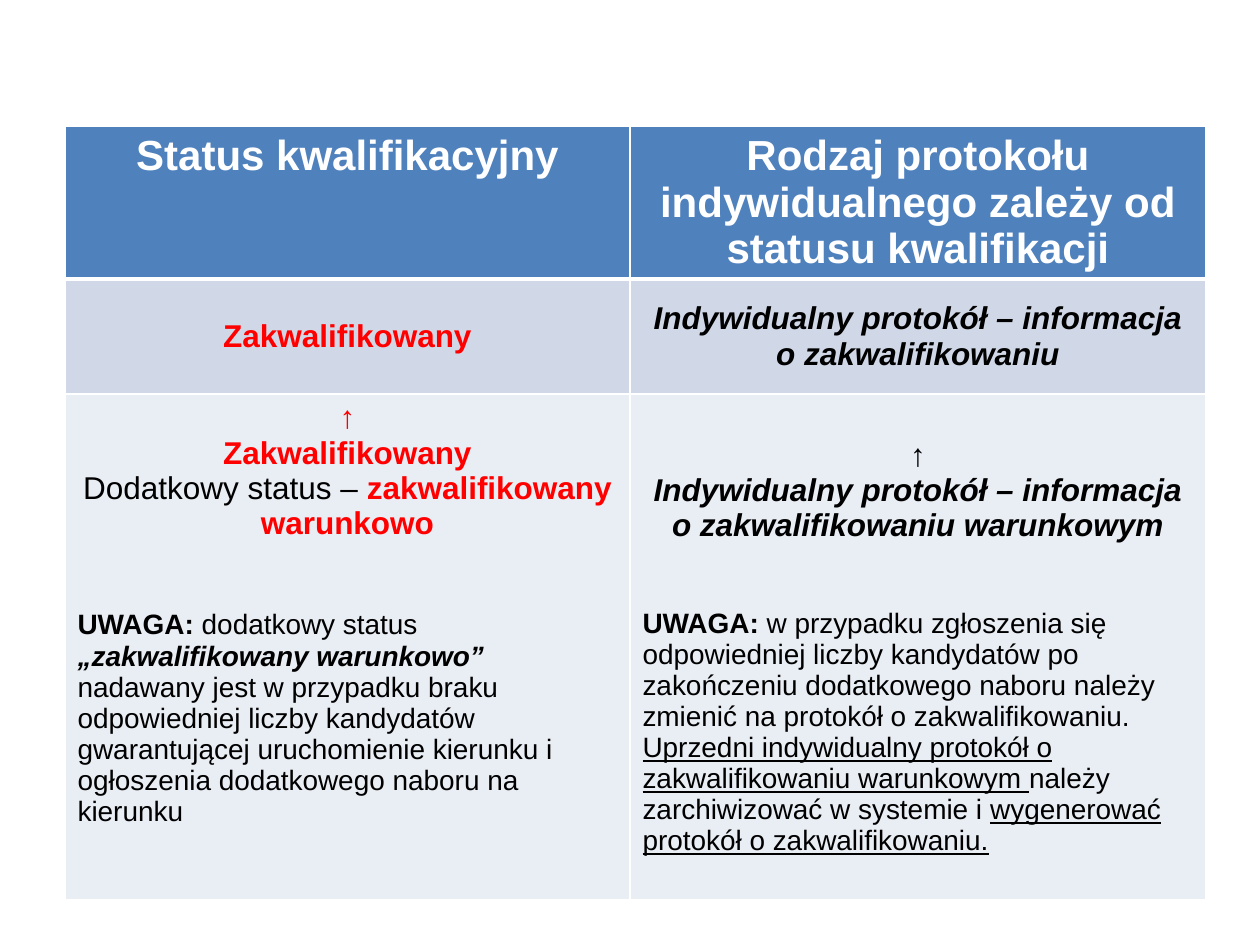
from dataclasses import dataclass
from typing import Optional

from lxml.etree import SubElement
from pptx import Presentation
from pptx.dml.color import RGBColor
from pptx.enum.text import MSO_ANCHOR as Anchor, PP_ALIGN as Align
from pptx.oxml.ns import qn
from pptx.util import Emu, Pt

EMU_PER_PX = 914400 / 126


@dataclass(frozen=True)
class Theme:
    font: str = "Arial"
    header_size: int = 24
    status_size: int = 18
    note_size: int = 16
    white: str = "FFFFFF"
    black: str = "000000"
    red: str = "FF0000"
    header_fill: str = "4F81BD"
    band_dark: str = "D0D8E8"
    band_light: str = "E9EDF4"
    line_width: int = 1
    header_line_width: int = 3


THEME = Theme()


@dataclass(frozen=True)
class Span:
    text: str
    size: int
    color: str = THEME.black
    bold: bool = False
    italic: bool = False
    underline: bool = False


@dataclass(frozen=True)
class Para:
    spans: list[Span]
    align: Optional[Align] = Align.CENTER
    space_before: int = 0


@dataclass(frozen=True)
class CellText:
    paras: list[Para]
    anchor: Anchor = Anchor.MIDDLE


@dataclass(frozen=True)
class Row:
    height: int
    fill: str
    cells: list[CellText]
    bottom_line: int = THEME.line_width
    top_line: int = THEME.line_width


def px(value: int) -> Emu:
    return Emu(round(value * EMU_PER_PX))


def header(text: str) -> CellText:
    span = Span(text, THEME.header_size, THEME.white, bold=True)
    return CellText([Para([span])], Anchor.TOP)


def status(text: str, **formats) -> Span:
    return Span(text, THEME.status_size, **{"bold": True, **formats})


def note(text: str, **formats) -> Span:
    return Span(text, THEME.note_size, **formats)


def add_span(paragraph, text: str, *, size: int, color: str, bold: bool,
             italic: bool, underline: bool) -> None:
    run = paragraph.add_run()
    run.text = text
    font = run.font
    font.name, font.size = THEME.font, Pt(size)
    font.bold, font.italic, font.underline = bold, italic, underline
    font.color.rgb = RGBColor.from_string(color)


def draw_borders(cell, top: int, bottom: int) -> None:
    properties = cell._tc.get_or_add_tcPr()
    side = THEME.line_width
    widths = {"lnL": side, "lnR": side, "lnT": top, "lnB": bottom}
    for position, (edge, width) in enumerate(widths.items()):
        line = SubElement(properties, qn(f"a:{edge}"), w=str(Pt(width)))
        fill = SubElement(line, qn("a:solidFill"))
        SubElement(fill, qn("a:srgbClr"), val=THEME.white)
        properties.insert(position, line)


def draw_cell(cell, content: CellText, row: Row) -> None:
    cell.fill.solid()
    cell.fill.fore_color.rgb = RGBColor.from_string(row.fill)
    cell.vertical_anchor = content.anchor
    draw_borders(cell, row.top_line, row.bottom_line)
    frame = cell.text_frame
    for index, para in enumerate(content.paras):
        paragraph = frame.add_paragraph() if index else frame.paragraphs[0]
        paragraph.alignment = para.align
        if para.space_before:
            paragraph.space_before = Pt(para.space_before)
        for span in para.spans:
            add_span(paragraph, span.text, size=span.size, color=span.color,
                     bold=span.bold, italic=span.italic, underline=span.underline)


def draw_table(page, left: int, top: int, widths: list[int], rows: list[Row]) -> None:
    height = sum(row.height for row in rows)
    table = page.shapes.add_table(len(rows), len(widths), px(left), px(top),
                                  px(sum(widths)), px(height)).table
    for column, width in zip(table.columns, widths):
        column.width = px(width)
    for row_index, row in enumerate(rows):
        table.rows[row_index].height = px(row.height)
        for column_index, content in enumerate(row.cells):
            draw_cell(table.cell(row_index, column_index), content, row)


CONDITIONAL_STATUS = CellText([
    Para([status("↑", color=THEME.red)]),
    Para([status("Zakwalifikowany", color=THEME.red)]),
    Para([status("Dodatkowy status – ", bold=False),
          status("zakwalifikowany warunkowo", color=THEME.red)]),
    Para([note("UWAGA: ", bold=True),
          note("dodatkowy status "),
          note("„zakwalifikowany warunkowo”", bold=True, italic=True),
          note(" nadawany jest w przypadku braku odpowiedniej liczby kandydatów "
               "gwarantującej uruchomienie kierunku i ogłoszenia dodatkowego "
               "naboru na kierunku")], Align.LEFT, space_before=39),
], Anchor.TOP)

CONDITIONAL_PROTOCOL = CellText([
    Para([status("↑", italic=True)]),
    Para([status("Indywidualny protokół – informacja o zakwalifikowaniu warunkowym",
                 italic=True)]),
    Para([note("UWAGA: ", bold=True),
          note("w przypadku zgłoszenia się odpowiedniej liczby kandydatów po "
               "zakończeniu dodatkowego naboru należy zmienić na protokół o "
               "zakwalifikowaniu.")], Align.LEFT, space_before=37),
    Para([note("Uprzedni indywidualny protokół o zakwalifikowaniu warunkowym ",
               underline=True),
          note("należy zarchiwizować w systemie i "),
          note("wygenerować protokół o zakwalifikowaniu.", underline=True)],
         Align.LEFT),
])

ROWS = [
    Row(152, THEME.header_fill,
        [header("Status kwalifikacyjny"),
         header("Rodzaj protokołu indywidualnego zależy od statusu kwalifikacji")],
        bottom_line=THEME.header_line_width),
    Row(115, THEME.band_dark,
        [CellText([Para([status("Zakwalifikowany", color=THEME.red)])]),
         CellText([Para([status("Indywidualny protokół – informacja o zakwalifikowaniu",
                                italic=True)])])],
        top_line=THEME.header_line_width),
    Row(506, THEME.band_light, [CONDITIONAL_STATUS, CONDITIONAL_PROTOCOL]),
]


def main() -> None:
    deck = Presentation()
    deck.slide_width, deck.slide_height = px(1260), px(945)
    page = deck.slides.add_slide(deck.slide_layouts[6])
    draw_table(page, left=65, top=126, widths=[565, 576], rows=ROWS)
    deck.save("out.pptx")


if __name__ == "__main__":
    main()
